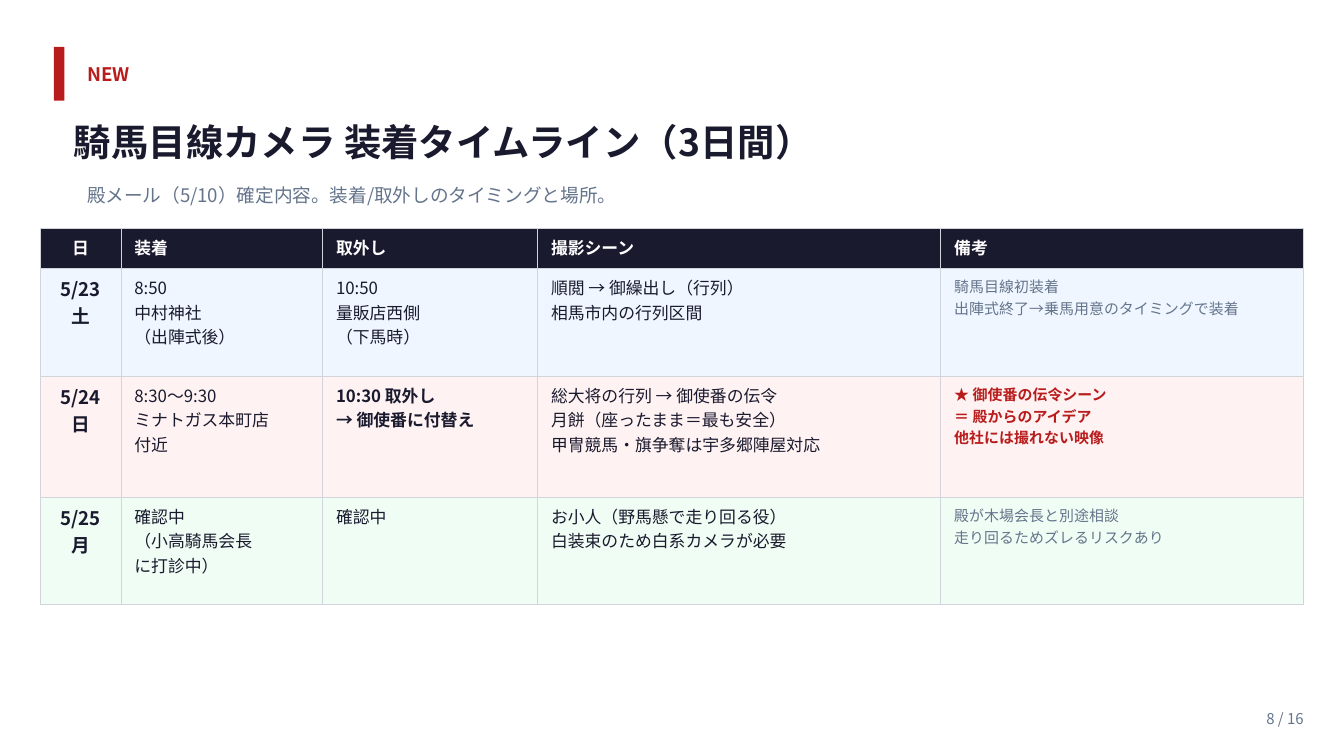
"""Build the three-day timeline slide for fitting the rider's-view camera."""
from lxml.etree import SubElement
from pptx import Presentation
from pptx.dml.color import RGBColor
from pptx.enum.shapes import MSO_SHAPE
from pptx.enum.text import MSO_ANCHOR, MSO_AUTO_SIZE, PP_ALIGN
from pptx.oxml.ns import qn
from pptx.util import Inches, Pt

FONT = "Noto Sans CJK JP"
NAVY = RGBColor(0x1A, 0x1A, 0x2E)
RED = RGBColor(0xB9, 0x1C, 0x1C)
SLATE = RGBColor(0x64, 0x74, 0x8B)
WHITE = RGBColor(0xFF, 0xFF, 0xFF)
PALE_BLUE = RGBColor(0xEF, 0xF6, 0xFF)
PALE_RED = RGBColor(0xFE, 0xF2, 0xF2)
PALE_GREEN = RGBColor(0xF0, 0xFD, 0xF4)
BORDER = RGBColor(0xD1, 0xD5, 0xDB)

SLIDE_WIDTH = Inches(10)
SLIDE_HEIGHT = SLIDE_WIDTH * 9 // 16

TITLE = "騎馬目線カメラ 装着タイムライン（3日間）"
TAG = "NEW"
SUBTITLE = "殿メール（5/10）確定内容。装着/取外しのタイミングと場所。"
PAGE_NUMBER = "8 / 16"

HEADINGS = ["日", "装着", "取外し", "撮影シーン", "備考"]
DAYS = [
    ["5/23\n土", "8:50\n中村神社\n（出陣式後）", "10:50\n量販店西側\n（下馬時）",
     "順閲 → 御繰出し（行列）\n相馬市内の行列区間",
     "騎馬目線初装着\n出陣式終了→乗馬用意のタイミングで装着"],
    ["5/24\n日", "8:30〜9:30\nミナトガス本町店\n付近", "10:30 取外し\n→ 御使番に付替え",
     "総大将の行列 → 御使番の伝令\n月餅（座ったまま＝最も安全）\n甲冑競馬・旗争奪は宇多郷陣屋対応",
     "★ 御使番の伝令シーン\n＝ 殿からのアイデア\n他社には撮れない映像"],
    ["5/25\n月", "確認中\n（小高騎馬会長\nに打診中）", "確認中",
     "お小人（野馬懸で走り回る役）\n白装束のため白系カメラが必要",
     "殿が木場会長と別途相談\n走り回るためズレるリスクあり"],
]
ROW_FILLS = [NAVY, PALE_BLUE, PALE_RED, PALE_GREEN]
COLUMN_WIDTHS = [0.6, 1.5, 1.6, 3, 2.7]
ROW_HEIGHTS = [0.3, 0.8, 0.9, 0.8]

HEADING_STYLE = (9, WHITE, True)
DAY_STYLE = (10, NAVY, True)
BODY_STYLE = (9, NAVY, False)
NOTE_STYLE = (8, SLATE, False)
COLUMN_STYLES = [DAY_STYLE, BODY_STYLE, BODY_STYLE, BODY_STYLE, NOTE_STYLE]
HIGHLIGHTS = {(2, 2): (9, NAVY, True), (2, 4): (8, RED, True)}


def write(frame, text, style, align=PP_ALIGN.LEFT):
    size, color, bold = style
    for index, line in enumerate(text.split("\n")):
        para = frame.paragraphs[0] if index == 0 else frame.add_paragraph()
        para.alignment = align
        span = para.add_run()
        span.text = line
        span.font.size, span.font.bold = Pt(size), bold
        span.font.color.rgb = color
        span.font.name = FONT
        SubElement(span.font._element, qn("a:ea"), typeface=FONT)


def add_text(page, text, place, style, align=PP_ALIGN.LEFT):
    box = page.shapes.add_textbox(*map(Inches, place))
    box.text_frame.word_wrap = True
    box.text_frame.vertical_anchor = MSO_ANCHOR.MIDDLE
    write(box.text_frame, text, style, align)


def add_title(page):
    title = page.shapes.title
    title.left, title.top, title.width, title.height = map(Inches, (0.55, 0.8, 9, 0.5))
    frame = title.text_frame
    frame.margin_left = frame.margin_right = frame.margin_top = frame.margin_bottom = 0
    frame.word_wrap, frame.auto_size = True, MSO_AUTO_SIZE.NONE
    frame.vertical_anchor = MSO_ANCHOR.MIDDLE
    write(frame, TITLE, (20, NAVY, True))


def set_borders(cell):
    properties = cell._tc.get_or_add_tcPr()
    for side in ("lnL", "lnR", "lnT", "lnB"):
        line = SubElement(properties, qn(f"a:{side}"), w=str(Pt(0.5)))
        fill = SubElement(line, qn("a:solidFill"))
        SubElement(fill, qn("a:srgbClr"), val=str(BORDER))


def add_timeline(page):
    rows = [HEADINGS] + DAYS
    table = page.shapes.add_table(
        len(rows), len(HEADINGS), Inches(0.3), Inches(1.7),
        Inches(sum(COLUMN_WIDTHS)), Inches(sum(ROW_HEIGHTS))).table
    for column, width in zip(table.columns, COLUMN_WIDTHS):
        column.width = Inches(width)
    for r, texts in enumerate(rows):
        table.rows[r].height = Inches(ROW_HEIGHTS[r])
        for c, text in enumerate(texts):
            cell = table.cell(r, c)
            set_borders(cell)
            cell.fill.solid()
            cell.fill.fore_color.rgb = ROW_FILLS[r]
            style = HIGHLIGHTS.get((r, c), COLUMN_STYLES[c]) if r else HEADING_STYLE
            write(cell.text_frame, text, style, PP_ALIGN.LEFT if c else PP_ALIGN.CENTER)


def main():
    deck = Presentation()
    deck.slide_width, deck.slide_height = SLIDE_WIDTH, SLIDE_HEIGHT
    page = deck.slides.add_slide(deck.slide_layouts[5])

    accent = page.shapes.add_shape(
        MSO_SHAPE.RECTANGLE, *map(Inches, (0.4, 0.35, 0.08, 0.4)))
    accent.shadow.inherit = False
    accent.fill.solid()
    accent.fill.fore_color.rgb = RED
    accent.line.fill.background()

    add_title(page)
    add_text(page, TAG, (0.55, 0.35, 2, 0.4), (10, RED, True))
    add_text(page, SUBTITLE, (0.55, 1.3, 9, 0.3), (10, SLATE, False))
    add_timeline(page)
    add_text(page, PAGE_NUMBER, (9, 5.2, 0.8, 0.3), NOTE_STYLE, PP_ALIGN.RIGHT)
    deck.save("out.pptx")


if __name__ == "__main__":
    main()
